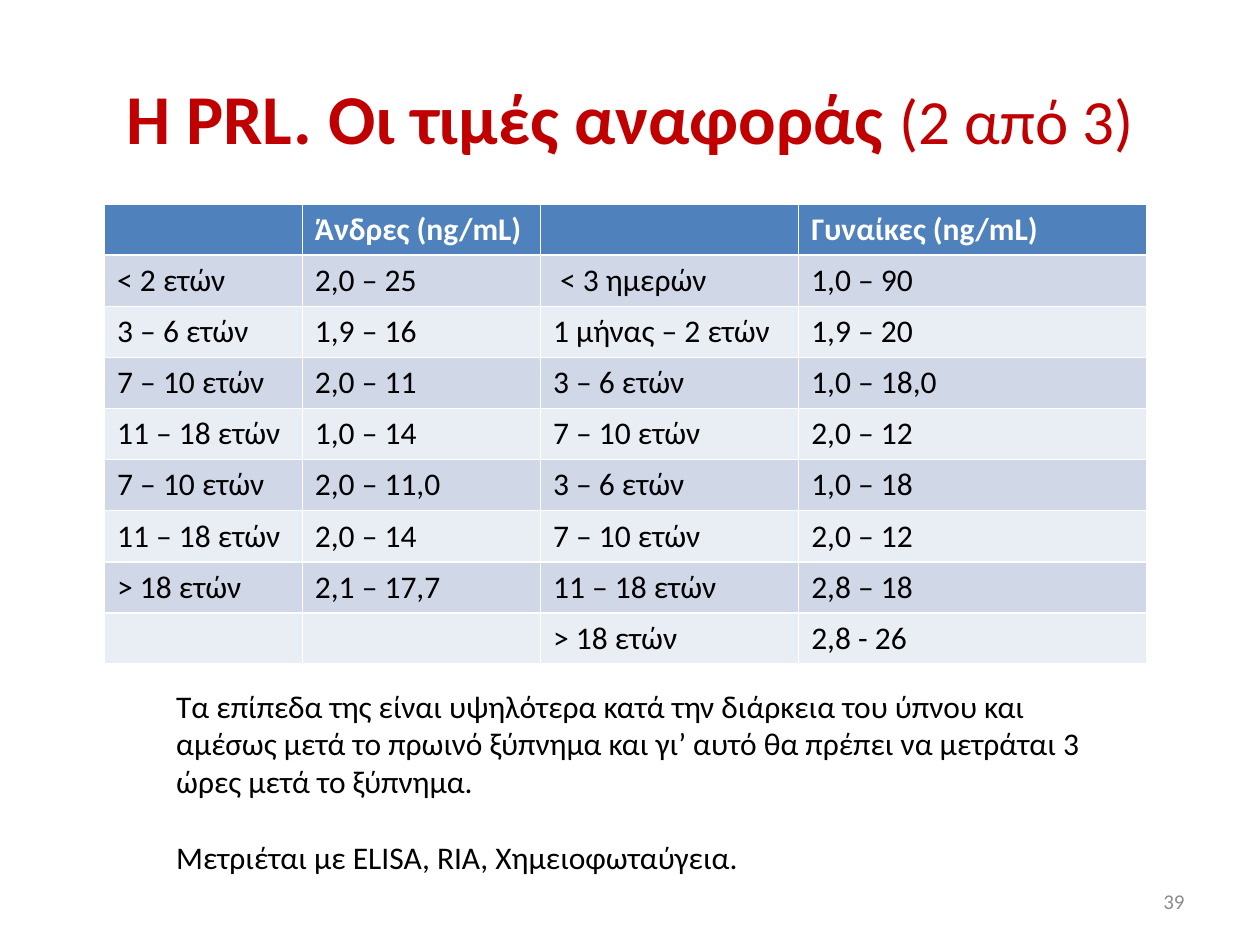
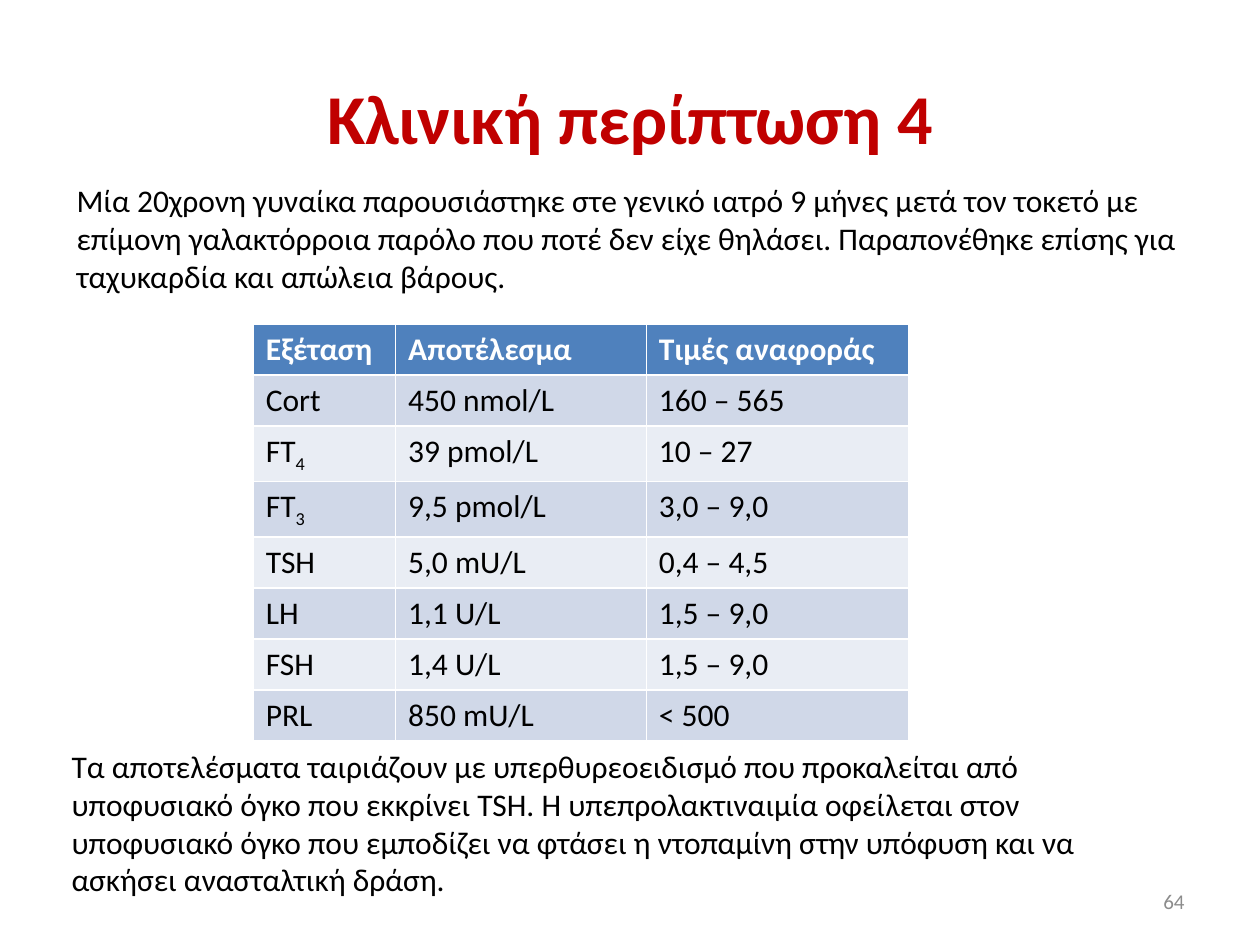
"""Build two endocrinology slides with reference values and a clinical case."""
from dataclasses import dataclass

import pptx
import pptx.dml.color
import pptx.enum.text
import pptx.presentation
import pptx.slide
import pptx.text.text
import pptx.util
from pptx.util import Inches

Align = pptx.enum.text.PP_ALIGN
Anchor = pptx.enum.text.MSO_ANCHOR


@dataclass(frozen=True)
class Theme:
    font: str = "Calibri"
    heading: str = "C00000"
    ink: str = "000000"
    page: str = "8C8C8C"
    header_ink: str = "FFFFFF"
    header_fill: str = "4F81BD"
    bands: tuple[str, str] = ("D0D8E8", "E9EDF4")
    heading_size: int = 40
    counter_size: int = 36
    body_size: int = 18
    page_size: int = 12
    paragraph_gap: int = 22


@dataclass(frozen=True)
class Box:
    left: float
    top: float
    width: float
    height: float

    def lengths(self) -> tuple[int, int, int, int]:
        return Inches(self.left), Inches(self.top), Inches(self.width), Inches(self.height)


@dataclass(frozen=True)
class Passage:
    box: Box
    paragraphs: tuple[str, ...]


@dataclass(frozen=True)
class LabTable:
    left: float
    top: float
    height: float
    columns: tuple[float, ...]
    rows: tuple[tuple[str, ...], ...]


@dataclass(frozen=True)
class Lesson:
    heading: str
    counter: str
    page: str
    table: LabTable
    passages: tuple[Passage, ...]


THEME = Theme()
HEADING_BOX = Box(0.5, 0.3, 9, 1.25)
PAGE_BOX = Box(7.17, 6.95, 2.33, 0.4)
SUBSCRIPT_MARK = "_"

PROLACTIN = Lesson(
    heading="Η PRL. Οι τιμές αναφοράς ",
    counter="(2 από 3)",
    page="39",
    table=LabTable(0.83, 1.62, 3.65, (1.57, 1.89, 2.05, 2.76), (
        ("", "Άνδρες (ng/mL)", "", "Γυναίκες (ng/mL)"),
        ("< 2 ετών", "2,0 – 25", " < 3 ημερών", "1,0 – 90"),
        ("3 – 6 ετών", "1,9 – 16", "1 μήνας – 2 ετών", "1,9 – 20"),
        ("7 – 10 ετών", "2,0 – 11", "3 – 6 ετών", "1,0 – 18,0"),
        ("11 – 18 ετών", "1,0 – 14", "7 – 10 ετών", "2,0 – 12"),
        ("7 – 10 ετών", "2,0 – 11,0", "3 – 6 ετών", "1,0 – 18"),
        ("11 – 18 ετών", "2,0 – 14", "7 – 10 ετών", "2,0 – 12"),
        ("> 18 ετών", "2,1 – 17,7", "11 – 18 ετών", "2,8 – 18"),
        ("", "", "> 18 ετών", "2,8 - 26"),
    )),
    passages=(
        Passage(Box(1.3, 5.4, 7.4, 1.62), (
            "Tα επίπεδα της είναι υψηλότερα κατά την διάρκεια του ύπνου και αμέσως μετά "
            "το πρωινό ξύπνημα και γι’ αυτό θα πρέπει να μετράται 3 ώρες μετά το ξύπνημα.",
            "Μετριέται με ΕLISA, RIA, Χημειοφωταύγεια.",
        )),
    ),
)

CLINICAL_CASE = Lesson(
    heading="Κλινική περίπτωση 4",
    counter="",
    page="64",
    table=LabTable(2.01, 2.57, 3.24, (1.13, 1.99, 2.08), (
        ("Εξέταση", "Αποτέλεσμα", "Τιμές αναφοράς"),
        ("Cort", "450 nmol/L", "160 – 565"),
        ("FT_4", "39 pmol/L", "10 – 27"),
        ("FT_3", "9,5 pmol/L", "3,0 – 9,0"),
        ("TSH", "5,0 mU/L", "0,4 – 4,5"),
        ("LH", "1,1 U/L", "1,5 – 9,0"),
        ("FSH", "1,4 U/L", "1,5 – 9,0"),
        ("PRL", "850 mU/L", "< 500"),
    )),
    passages=(
        Passage(Box(0.51, 1.39, 9.13, 1.01), (
            "Μία 20χρονη γυναίκα παρουσιάστηκε στe γενικό ιατρό 9 μήνες μετά τον τοκετό με "
            "επίμονη γαλακτόρροια παρόλο που ποτέ δεν είχε θηλάσει. Παραπονέθηκε επίσης για "
            "ταχυκαρδία και απώλεια βάρους.",
        )),
        Passage(Box(0.47, 5.88, 8.82, 1.31), (
            "Tα αποτελέσματα ταιριάζουν με υπερθυρεοειδισμό που προκαλείται από υποφυσιακό "
            "όγκο που εκκρίνει TSH. Η υπεπρολακτιναιμία οφείλεται στον υποφυσιακό όγκο που "
            "εμποδίζει να φτάσει η ντοπαμίνη στην υπόφυση και να ασκήσει ανασταλτική δράση.",
        )),
    ),
)


def rgb(color: str) -> pptx.dml.color.RGBColor:
    return pptx.dml.color.RGBColor.from_string(color)


def style(font: pptx.text.text.Font, size: int, color: str, bold: bool = False) -> None:
    font.name = THEME.font
    font.size = pptx.util.Pt(size)
    font.bold = bold
    font.color.rgb = rgb(color)


def draw_heading(slide: pptx.slide.Slide, lesson: Lesson) -> None:
    heading = slide.shapes.title
    heading.left, heading.top, heading.width, heading.height = HEADING_BOX.lengths()
    frame = heading.text_frame
    frame.auto_size = pptx.enum.text.MSO_AUTO_SIZE.NONE
    frame.vertical_anchor = Anchor.MIDDLE
    paragraph = frame.paragraphs[0]
    paragraph.alignment = Align.CENTER
    for words, size, bold in ((lesson.heading, THEME.heading_size, True),
                              (lesson.counter, THEME.counter_size, False)):
        if words:
            run = paragraph.add_run()
            run.text = words
            style(run.font, size, THEME.heading, bold)


def add_frame(slide: pptx.slide.Slide, box: Box) -> pptx.text.text.TextFrame:
    frame = slide.shapes.add_textbox(*box.lengths()).text_frame
    frame.word_wrap = True
    return frame


def draw_passage(slide: pptx.slide.Slide, passage: Passage) -> None:
    frame = add_frame(slide, passage.box)
    for index, words in enumerate(passage.paragraphs):
        paragraph = frame.add_paragraph() if index else frame.paragraphs[0]
        paragraph.text = words
        style(paragraph.font, THEME.body_size, THEME.ink)
        if index:
            paragraph.space_before = pptx.util.Pt(THEME.paragraph_gap)


def draw_page(slide: pptx.slide.Slide, page: str) -> None:
    frame = add_frame(slide, PAGE_BOX)
    frame.vertical_anchor = Anchor.MIDDLE
    paragraph = frame.paragraphs[0]
    paragraph.text = page
    paragraph.alignment = Align.RIGHT
    style(paragraph.font, THEME.page_size, THEME.page)


def draw_table(slide: pptx.slide.Slide, lab: LabTable) -> None:
    box = Box(lab.left, lab.top, sum(lab.columns), lab.height)
    grid = slide.shapes.add_table(len(lab.rows), len(lab.columns), *box.lengths()).table
    for column, width in zip(grid.columns, lab.columns):
        column.width = Inches(width)
    for row, values in enumerate(lab.rows):
        is_header = row == 0
        fill = THEME.header_fill if is_header else THEME.bands[(row - 1) % 2]
        ink = THEME.header_ink if is_header else THEME.ink
        for column, value in enumerate(values):
            cell = grid.cell(row, column)
            cell.fill.solid()
            cell.fill.fore_color.rgb = rgb(fill)
            paragraph = cell.text_frame.paragraphs[0]
            style(paragraph.font, THEME.body_size, ink, is_header)
            base, _, subscript = value.partition(SUBSCRIPT_MARK)
            if base:
                paragraph.add_run().text = base
            if subscript:
                lowered = paragraph.add_run()
                lowered.text = subscript
                lowered.font._element.set("baseline", "-25000")


def draw_lesson(deck: pptx.presentation.Presentation, lesson: Lesson) -> None:
    slide = deck.slides.add_slide(deck.slide_layouts.get_by_name("Title Only"))
    draw_heading(slide, lesson)
    draw_page(slide, lesson.page)
    draw_table(slide, lesson.table)
    for passage in lesson.passages:
        draw_passage(slide, passage)


def main() -> None:
    deck = pptx.Presentation()
    deck.slide_width, deck.slide_height = Inches(10), Inches(7.5)
    for lesson in (PROLACTIN, CLINICAL_CASE):
        draw_lesson(deck, lesson)
    deck.save("out.pptx")


if __name__ == "__main__":
    main()
